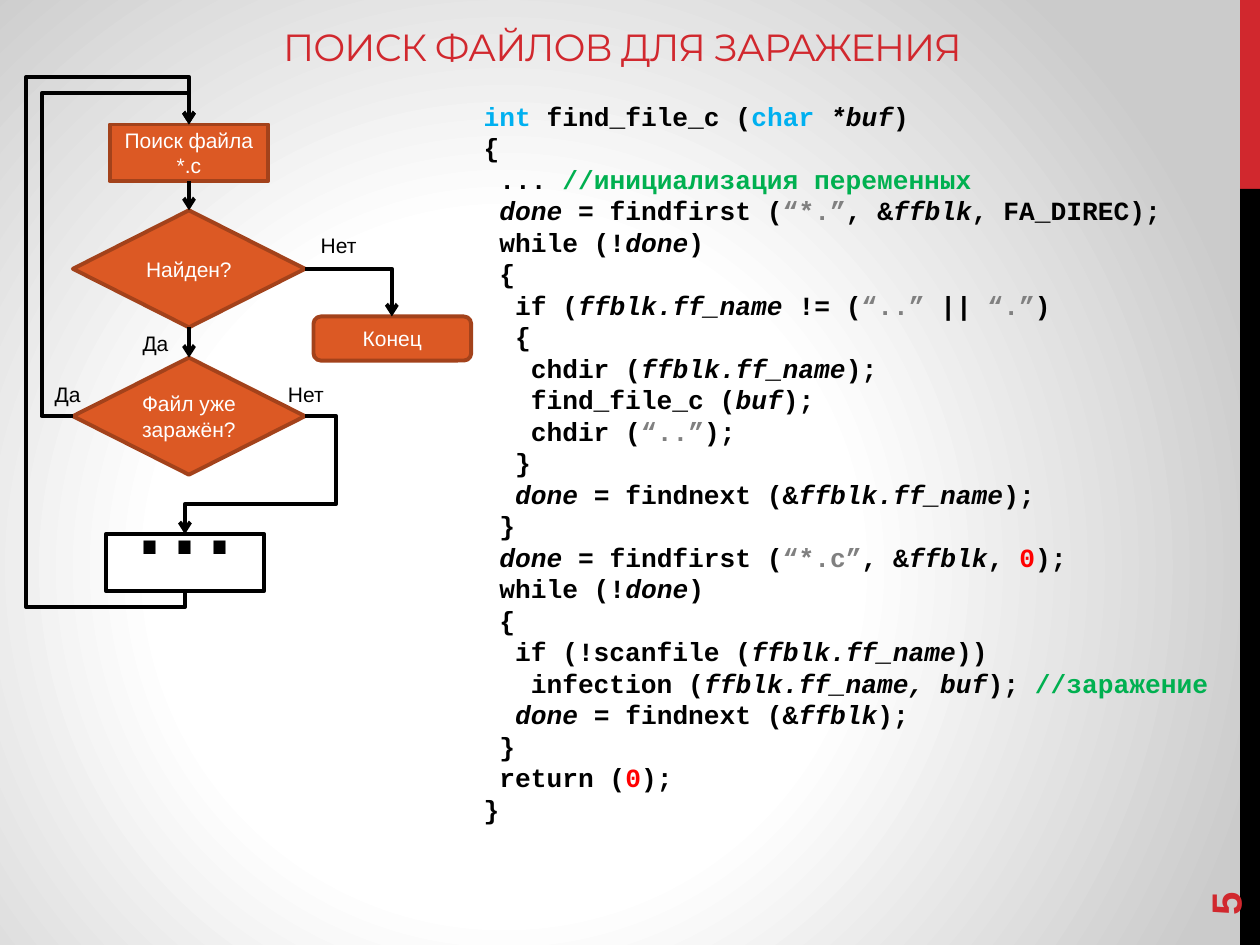
from lxml import etree
from pptx import Presentation
from pptx.dml.color import RGBColor
from pptx.enum.shapes import MSO_CONNECTOR, MSO_SHAPE
from pptx.enum.text import MSO_ANCHOR, PP_ALIGN
from pptx.oxml import parse_xml
from pptx.oxml.ns import nsdecls, qn
from pptx.util import Cm, Pt

RED = RGBColor(0xD1, 0x28, 0x2E)
ORANGE = RGBColor(0xDC, 0x59, 0x24)
RUST = RGBColor(0xA3, 0x42, 0x1B)
BLACK = RGBColor(0x00, 0x00, 0x00)
WHITE = RGBColor(0xFF, 0xFF, 0xFF)
BLUE = RGBColor(0x00, 0xB0, 0xF0)
GREEN = RGBColor(0x00, 0xB0, 0x50)
GRAY = RGBColor(0x80, 0x80, 0x80)
BRIGHT_RED = RGBColor(0xFF, 0x00, 0x00)

# Each "~x" in the listing switches to the style with letter x: colour, italic
CODE_STYLES = {
    "p": (BLACK, False),       # plain
    "v": (BLACK, True),        # variable
    "k": (BLUE, False),        # keyword
    "c": (GREEN, False),       # comment
    "s": (GRAY, False),        # string
    "n": (BRIGHT_RED, False),  # number
}
CODE = """\
~kint ~pfind_file_c (~kchar ~v*buf~p)
~p{
~p ... ~c//инициализация переменных
~p ~vdone~p = findfirst (~s“*.”~p, &~vffblk~p, FA_DIREC);
~p while (!~vdone~p)
~p {
~p  if (~vffblk.ff_name ~p!= (~s“..” ~p|| ~s“.”~p)
~p  {
~p   chdir (~vffblk.ff_name~p);
~p   find_file_c (~vbuf~p);
~p   chdir (~s“..”~p);
~p  }
~v  done ~p= findnext (&~vffblk.ff_name~p);
~p }
~p ~vdone~p = findfirst (~s“*.c”~p, &~vffblk~p, ~n0~p);
~p while (!~vdone~p)
~p {
~p  if (!scanfile (~vffblk.ff_name~p))
~p   infection (~vffblk.ff_name, buf~p); ~c//заражение
~p  ~vdone~p = findnext (&~vffblk~p);
~p }
~p return (~n0~p);
~p}"""


def write(shape, text, size, color, align=PP_ALIGN.CENTER, anchor=MSO_ANCHOR.MIDDLE,
          font="Arial", bold=False):
    frame = shape.text_frame
    frame.text = text
    frame.word_wrap = True
    frame.vertical_anchor = anchor
    for paragraph in frame.paragraphs:
        paragraph.alignment = align
        for run in paragraph.runs:
            run.font.name = font
            run.font.size = Pt(size)
            run.font.bold = bold
            run.font.color.rgb = color


def add_block(slide, kind, box, fill, line=None):
    shape = slide.shapes.add_shape(kind, *(Cm(value) for value in box))
    shape.shadow.inherit = False
    shape.fill.solid()
    shape.fill.fore_color.rgb = fill
    if line is None:
        shape.line.fill.background()
    else:
        shape.line.color.rgb = line
        shape.line.width = Pt(2.25)
    return shape


def add_text(slide, box, text, size, color, **options):
    shape = slide.shapes.add_textbox(*(Cm(value) for value in box))
    write(shape, text, size, color, **options)
    return shape


def add_arrow(slide, begin, end, kind=MSO_CONNECTOR.STRAIGHT):
    connector = slide.shapes.add_connector(kind, *(Cm(value) for value in (*begin, *end)))
    connector.line.color.rgb = BLACK
    connector.line.width = Pt(2.25)
    etree.SubElement(connector.line._get_or_add_ln(), qn("a:tailEnd"), type="arrow")
    etree.SubElement(connector._element.spPr, qn("a:effectLst"))
    return connector


def add_elbow(slide, points):
    """Draw a bent arrow through points, working out its preset and adjustments."""
    begin, *corners, end = points
    upright = begin[0] == corners[0][0]
    start, finish = begin, end
    if upright:  # drawn lying down about its centre, then turned by 90 degrees
        center = [(a + b) / 2 for a, b in zip(begin, end)]
        half_width, half_height = (end[1] - begin[1]) / 2, (begin[0] - end[0]) / 2
        start = center[0] - half_width, center[1] - half_height
        finish = center[0] + half_width, center[1] + half_height
    connector = add_arrow(slide, start, finish, MSO_CONNECTOR.ELBOW)
    properties = connector._element.spPr
    if upright:
        properties.find(qn("a:xfrm")).set("rot", "5400000")
    geometry = properties.find(qn("a:prstGeom"))
    geometry.set("prst", f"bentConnector{len(points) - 1}")
    guides = geometry.get_or_add_avLst()
    for index, corner in enumerate(corners[:-1]):
        axis = (index + upright) % 2
        ratio = (corner[axis] - begin[axis]) / (end[axis] - begin[axis])
        etree.SubElement(guides, qn("a:gd"), name=f"adj{index + 1}",
                         fmla=f"val {round(ratio * 100000)}")


def paint_background(slide):
    slide.background.fill.gradient()
    gradient = slide.element.find(".//" + qn("a:gradFill"))
    stops = "".join(f'<a:gs pos="{position}"><a:srgbClr val="{color}"/></a:gs>'
                    for position, color in ((0, "FFFFFF"), (44000, "FFFFFF"), (100000, "CBCBCB")))
    gradient.getparent().replace(gradient, parse_xml(
        f'<a:gradFill {nsdecls("a")} rotWithShape="1"><a:gsLst>{stops}</a:gsLst>'
        '<a:path path="circle"><a:fillToRect l="40000" t="60000" r="60000" b="40000"/></a:path>'
        '</a:gradFill>'))


def add_side_band(slide, left, top, width, height):
    red_height = height / 5
    add_block(slide, MSO_SHAPE.RECTANGLE, (left, top, width, red_height), RED)
    add_block(slide, MSO_SHAPE.RECTANGLE,
              (left, top + red_height, width, height - red_height), BLACK)


def add_title(slide, *box):
    shape = add_text(slide, box, "ПОИСК ФАЙЛОВ ДЛЯ ЗАРАЖЕНИЯ", 21.6, RED,
                     anchor=MSO_ANCHOR.BOTTOM, font="Montserrat")
    shape.text_frame.paragraphs[0].runs[0].font._element.set("spc", "-60")


def add_page_number(slide, *box):
    shape = add_text(slide, box, "5", 24, RED, align=PP_ALIGN.LEFT, bold=True)
    shape.rotation = 270


def add_listing(slide, *box):
    frame = slide.shapes.add_textbox(*(Cm(value) for value in box)).text_frame
    frame.word_wrap = True
    frame.margin_top = Cm(0.22)
    for index, line in enumerate(CODE.split("\n")):
        paragraph = frame.add_paragraph() if index else frame.paragraphs[0]
        paragraph.line_spacing = Pt(18)
        for piece in line.split("~")[1:]:
            run = paragraph.add_run()
            run.text = piece[1:]
            run.font.name = "Courier New"
            run.font.size = Pt(15)
            run.font.bold = True
            run.font.color.rgb, run.font.italic = CODE_STYLES[piece[0]]


def add_flowchart(slide, left, top):
    def place(x, y, *size):
        return (left + x, top + y, *size)

    def add_step(kind, box, text):
        shape = add_block(slide, kind, place(*box), ORANGE, RUST)
        write(shape, text, 12, WHITE)
        return shape

    # Steps
    search = add_step(MSO_SHAPE.RECTANGLE, (1.71, 1.01, 3.2, 1.14), "Поиск файла\n*.c")
    found, infected = (
        add_step(MSO_SHAPE.FLOWCHART_DECISION, (0.97, y, 4.68, 2.36), text)
        for y, text in ((2.74, "Найден?"), (5.71, "Файл уже заражён?")))
    for decision in (found, infected):
        decision.text_frame.margin_left = decision.text_frame.margin_right = Cm(0.2)
    add_step(MSO_SHAPE.FLOWCHART_ALTERNATE_PROCESS, (5.82, 4.88, 3.18, 0.89), "Конец")
    more = add_block(slide, MSO_SHAPE.RECTANGLE, place(1.63, 9.27, 3.2, 1.14), WHITE, BLACK)
    write(more, "...", 72, BLACK)
    more.text_frame.paragraphs[0].line_spacing = Pt(20)

    # Straight arrows between neighbouring steps
    for upper, lower in ((search, found), (found, infected)):
        arrow = add_arrow(slide, (left, top), (left, top))
        arrow.begin_connect(upper, 2)
        arrow.end_connect(lower, 0)

    # Bent arrows: exit, repeat, continue, back to the start
    for points in (
        ((5.65, 3.92), (7.4, 3.92), (7.4, 4.88)),
        ((0.97, 6.89), (0.34, 6.89), (0.34, 0.38), (3.31, 0.38), (3.31, 1.01)),
        ((5.65, 6.89), (6.28, 6.89), (6.28, 8.66), (3.23, 8.66), (3.23, 9.27)),
        ((3.23, 10.41), (3.23, 10.74), (0.03, 10.74), (0.03, 0.05), (3.31, 0.05), (3.31, 1.01)),
    ):
        add_elbow(slide, [place(*point) for point in points])

    # Branch labels
    for x, y, text in ((5.65, 2.97, "Нет"), (1.96, 4.95, "Да"),
                       (0.19, 5.97, "Да"), (4.99, 5.97, "Нет")):
        add_text(slide, place(x, y, 1.35, 0.94), text, 12, BLACK)


def main():
    presentation = Presentation()
    presentation.slide_width, presentation.slide_height = Cm(25.4), Cm(19.05)
    slide = presentation.slides.add_slide(presentation.slide_layouts[6])
    paint_background(slide)
    add_side_band(slide, 25, 0, 0.4, 19.05)
    add_title(slide, 0, 0.43, 25.1, 1.09)
    add_listing(slide, 9.5, 1.8, 15.39, 16.13)
    add_page_number(slide, 22.86, 16.36, 3.66, 1.02)
    add_flowchart(slide, 0.5, 1.5)
    presentation.save("out.pptx")


if __name__ == "__main__":
    main()
